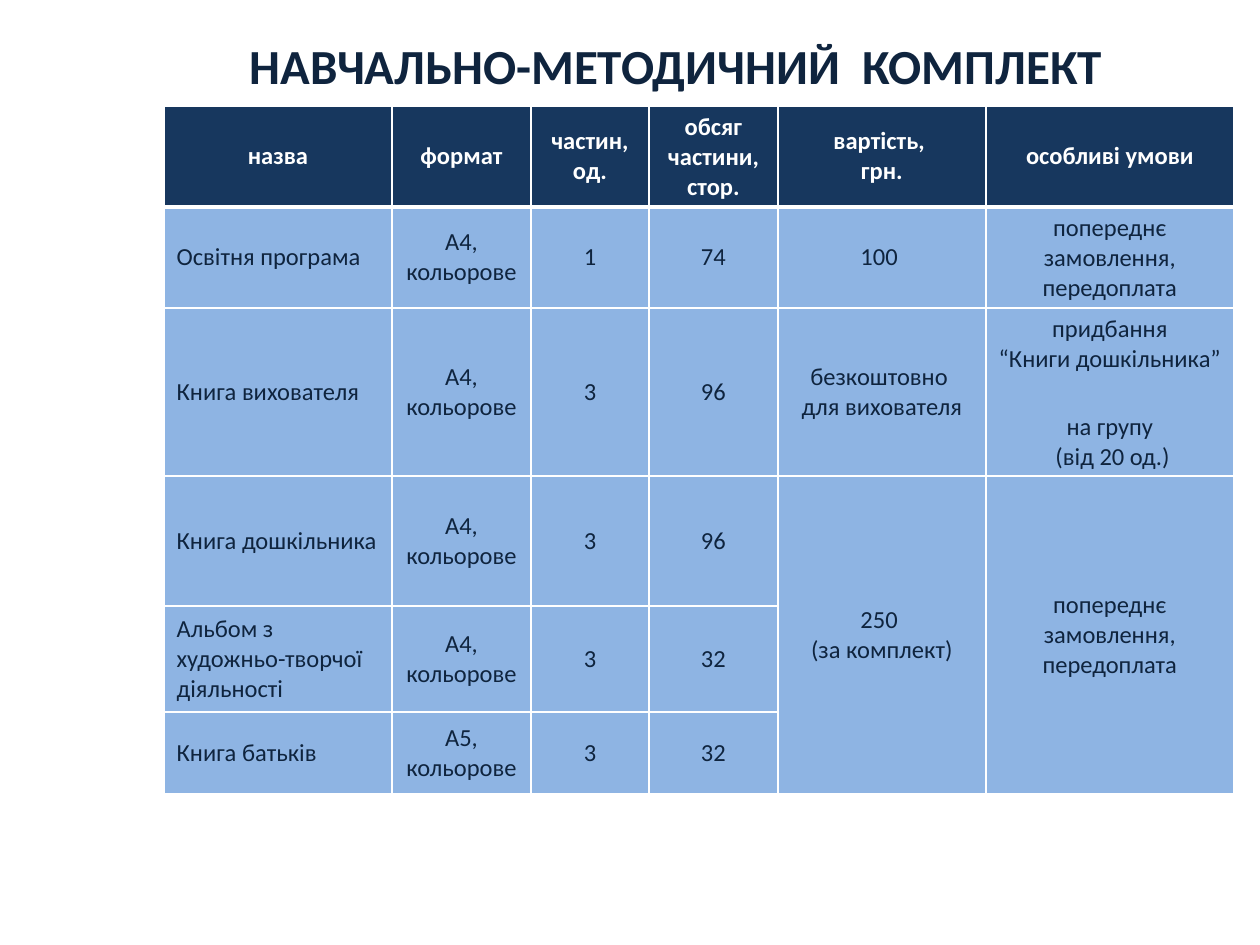
from lxml.etree import SubElement
from pptx import Presentation
from pptx.dml.color import RGBColor
from pptx.enum.text import MSO_ANCHOR as Anchor, PP_ALIGN as Align
from pptx.oxml.ns import qn
from pptx.util import Emu, Pt

PX = 914400 // 126
FONT = "Calibri"
NAVY = RGBColor(0x17, 0x37, 0x5E)
INK = RGBColor(0x0F, 0x24, 0x3E)
BLUE = RGBColor(0x8E, 0xB4, 0xE3)
WHITE = RGBColor(0xFF, 0xFF, 0xFF)

COLUMNS = [228, 139, 118, 129, 208, 248]
ROW_HEIGHTS = [100, 97, 125, 130, 106, 82]
COLOR_A4 = "А4, кольорове"
PREPAID = "попереднє замовлення, передоплата"
ROWS = [
    ["назва", "формат", "частин, од.", "обсяг частини, стор.",
     "вартість, \nгрн.", "особливі умови"],
    ["Освітня програма", COLOR_A4, "1", "74", "100 ", PREPAID],
    ["Книга вихователя", COLOR_A4, "3", "96", "безкоштовно \nдля вихователя",
     "придбання\n“Книги дошкільника” \nна групу\n (від 20 од.)"],
    ["Книга дошкільника", COLOR_A4, "3", "96", "250 \n(за комплект)", PREPAID],
    ["Альбом з художньо-творчої діяльності", COLOR_A4, "3", "32", "", ""],
    ["Книга батьків", "А5, кольорове", "3", "32", "", ""],
]
KIT_FIRST_ROW, KIT_LAST_ROW = 3, 5
KIT_COLUMNS = (4, 5)


def px(n):
    return Emu(n * PX)


def write(tf, text, size, color, bold, align):
    p = tf.paragraphs[0]
    p.alignment = align
    for i, line in enumerate(text.split("\n")):
        if i:
            p.add_line_break()
        r = p.add_run()
        r.text = line
        r.font.name = FONT
        r.font.size = Pt(size)
        r.font.bold = bold
        r.font.color.rgb = color


def add_title(s, text):
    tf = s.shapes.add_textbox(px(154), px(6), px(1043), px(117)).text_frame
    tf.word_wrap = True
    tf.vertical_anchor = Anchor.MIDDLE
    write(tf, text, 28, INK, True, Align.CENTER)


def set_borders(cell, top, bottom):
    tcPr = cell._tc.get_or_add_tcPr()
    for side, width in (("L", 1), ("R", 1), ("T", top), ("B", bottom)):
        ln = SubElement(tcPr, qn(f"a:ln{side}"), w=str(Pt(width)))
        fill = SubElement(ln, qn("a:solidFill"))
        SubElement(fill, qn("a:srgbClr"), val=str(WHITE))


def style_cell(cell, row, col, text):
    header = row == 0
    set_borders(cell, 3 if row == 1 else 1, 3 if header else 1)
    cell.fill.solid()
    cell.fill.fore_color.rgb = NAVY if header else BLUE
    cell.vertical_anchor = Anchor.MIDDLE
    if text:
        align = Align.LEFT if col == 0 and not header else Align.CENTER
        write(cell.text_frame, text, 14, WHITE if header else INK, header, align)


def add_kit_table(s):
    table = s.shapes.add_table(
        len(ROWS), len(COLUMNS), px(164), px(106),
        px(sum(COLUMNS)), px(sum(ROW_HEIGHTS))).table
    for column, width in zip(table.columns, COLUMNS):
        column.width = px(width)
    for row, height in zip(table.rows, ROW_HEIGHTS):
        row.height = px(height)
    for i, texts in enumerate(ROWS):
        for j, text in enumerate(texts):
            style_cell(table.cell(i, j), i, j, text)
    for j in KIT_COLUMNS:
        table.cell(KIT_FIRST_ROW, j).merge(table.cell(KIT_LAST_ROW, j))


def main():
    prs = Presentation()
    prs.slide_width, prs.slide_height = px(1260), px(945)
    s = prs.slides.add_slide(prs.slide_layouts[6])
    add_title(s, "НАВЧАЛЬНО-МЕТОДИЧНИЙ  КОМПЛЕКТ")
    add_kit_table(s)
    prs.save("out.pptx")


if __name__ == "__main__":
    main()
